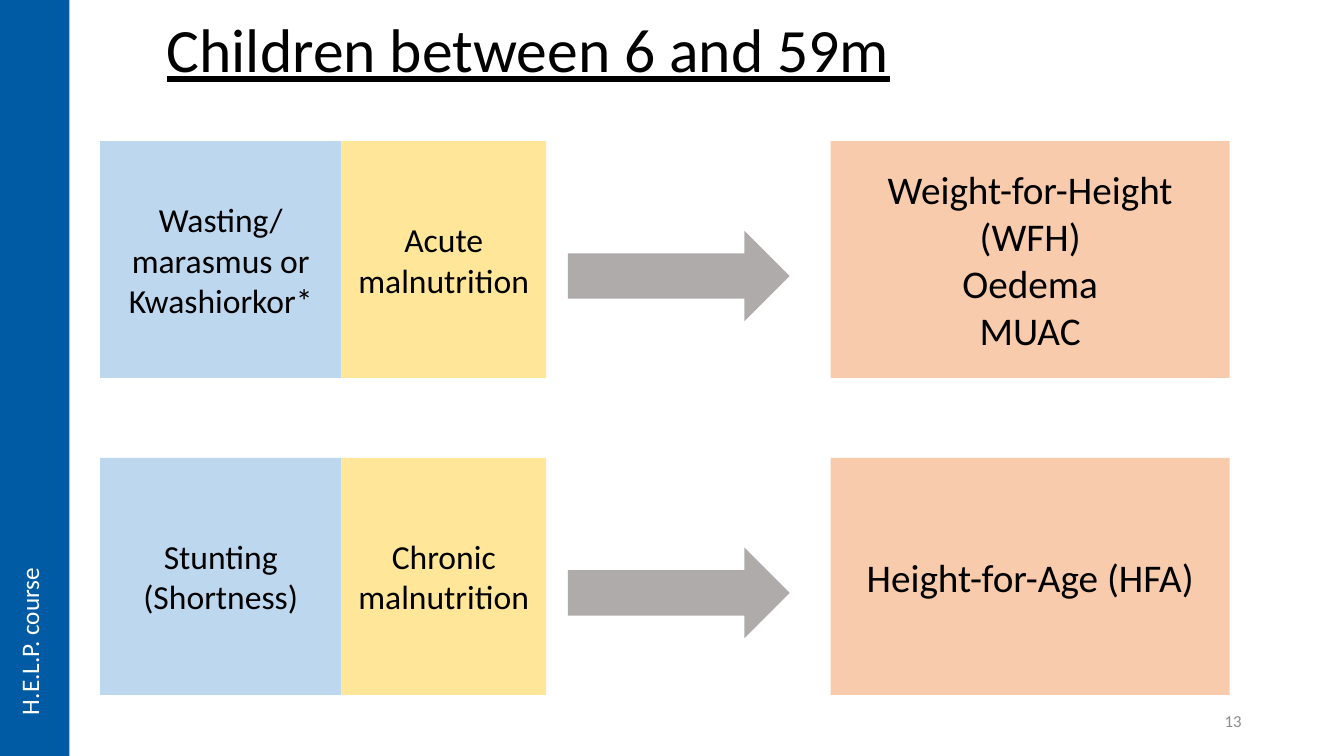
from pptx import Presentation
from pptx.dml.color import RGBColor
from pptx.enum import shapes, text
from pptx.util import Pt

FONT = "Calibri"
BLACK = RGBColor(0x00, 0x00, 0x00)
WHITE = RGBColor(0xFF, 0xFF, 0xFF)
GREY = RGBColor(0x8C, 0x8C, 0x8C)
SIDEBAR_BLUE = RGBColor(0x00, 0x5B, 0xA4)
SIGN_BLUE = RGBColor(0xBD, 0xD7, 0xEE)
TYPE_YELLOW = RGBColor(0xFF, 0xE6, 0x99)
ARROW_GREY = RGBColor(0xAF, 0xAB, 0xAB)
MEASURE_ORANGE = RGBColor(0xF8, 0xCB, 0xAD)

RECTANGLE = shapes.MSO_SHAPE.RECTANGLE
RIGHT_ARROW = shapes.MSO_SHAPE.RIGHT_ARROW
CENTER = text.PP_ALIGN.CENTER
MIDDLE = text.MSO_ANCHOR.MIDDLE

ROWS = [
    (["Wasting/", "marasmus or Kwashiorkor*"], ["Acute", "malnutrition"],
     ["Weight-for-Height (WFH)", "Oedema", "MUAC"]),
    (["Stunting", "(Shortness)"], ["Chronic", "malnutrition"],
     ["Height-for-Age (HFA)"]),
]


def write(frame, lines, size, color, align, anchor):
    frame.word_wrap = True
    frame.vertical_anchor = anchor
    for index, line in enumerate(lines):
        paragraph = frame.paragraphs[0] if index == 0 else frame.add_paragraph()
        paragraph.alignment = align
        run = paragraph.add_run()
        run.text = line
        run.font.name = FONT
        run.font.size = Pt(size)
        run.font.color.rgb = color


def add_block(slide, kind, left, top, width, height, fill):
    shape = slide.shapes.add_shape(kind, Pt(left), Pt(top), Pt(width), Pt(height))
    shape.shadow.inherit = False
    shape.fill.solid()
    shape.fill.fore_color.rgb = fill
    shape.line.fill.background()
    return shape


def add_text(slide, left, top, width, height, line, size, color, align, anchor):
    box = slide.shapes.add_textbox(Pt(left), Pt(top), Pt(width), Pt(height))
    write(box.text_frame, [line], size, color, align, anchor)
    return box.text_frame


def add_sidebar(slide, left, top, width, height):
    add_block(slide, RECTANGLE, left, top, width, height, SIDEBAR_BLUE)
    frame = add_text(slide, left + 6.5, top + 404, 36, 113.8, "H.E.L.P. course",
                     18, WHITE, text.PP_ALIGN.LEFT, text.MSO_ANCHOR.TOP)
    frame.word_wrap = False
    frame.auto_size = text.MSO_AUTO_SIZE.SHAPE_TO_FIT_TEXT
    frame._txBody.bodyPr.set("vert", "vert270")


def add_title(slide, left, top, width, height):
    frame = add_text(slide, left, top, width, height, "Children between 6 and 59m",
                     44, BLACK, CENTER, text.MSO_ANCHOR.BOTTOM)
    paragraph = frame.paragraphs[0]
    paragraph.line_spacing = 0.9
    paragraph.runs[0].font.underline = True


def add_row(slide, left, top, height, sign, malnutrition, measure):
    for offset, width, fill, lines, size in (
        (0, 172.4, SIGN_BLUE, sign, 24),
        (172.4, 146.2, TYPE_YELLOW, malnutrition, 24),
        (521.8, 285.1, MEASURE_ORANGE, measure, 28),
    ):
        block = add_block(slide, RECTANGLE, left + offset, top, width, height, fill)
        write(block.text_frame, lines, size, BLACK, CENTER, MIDDLE)
    add_block(slide, RIGHT_ARROW, left + 334.2, top + 64, 158.4, 64.8, ARROW_GREY)


def main():
    presentation = Presentation()
    presentation.slide_width = Pt(960)
    presentation.slide_height = Pt(540)
    slide = presentation.slides.add_slide(presentation.slide_layouts[6])
    add_sidebar(slide, 0, 0, 49.6, 540)
    add_title(slide, 71.5, 0, 612, 64.8)
    for index, row in enumerate(ROWS):
        add_row(slide, 71.5, 100.8 + index * 226.3, 169.2, *row)
    add_text(slide, 678, 500.4, 216, 28.8, "13", 12, GREY,
             text.PP_ALIGN.RIGHT, MIDDLE)
    presentation.save("out.pptx")


if __name__ == "__main__":
    main()
